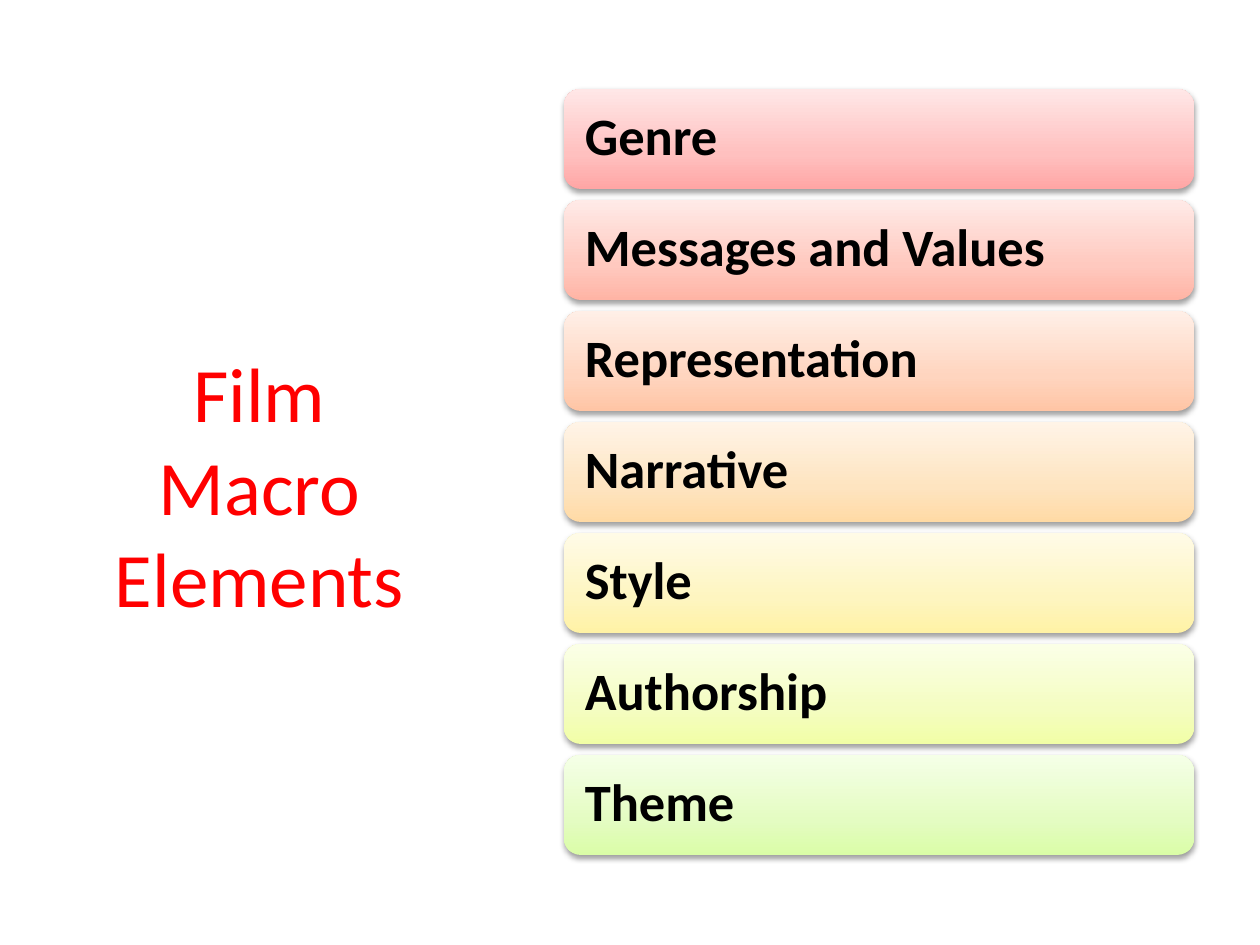
from lxml import etree
from pptx import Presentation
from pptx.dml.color import RGBColor
from pptx.enum.shapes import MSO_SHAPE
from pptx.enum.text import MSO_ANCHOR, PP_ALIGN
from pptx.util import Pt

ROUND = MSO_SHAPE.ROUNDED_RECTANGLE
MIDDLE = MSO_ANCHOR.MIDDLE
LEFT, CENTER = PP_ALIGN.LEFT, PP_ALIGN.CENTER
SCALE = 914400 / 126
NS = "http://schemas.openxmlformats.org/drawingml/2006/main"
STOPS = (0, 35, 100)
COLORS = {
    "title": "FF0000",
    "text": "000000",
    "shadow": "000000",
    "Genre": ("FFA6A5", "FFC0BF", "FFE7E7"),
    "Messages and Values": ("FFB4A5", "FFC9BF", "FFEAE7"),
    "Representation": ("FFC5A5", "FFD5BF", "FFEFE7"),
    "Narrative": ("FFDAA5", "FEE4C0", "FFF4E7"),
    "Style": ("FFF2A5", "FEF5C0", "FFFBE7"),
    "Authorship": ("F1FEA6", "F4FDC1", "FBFFE7"),
    "Theme": ("DAFDA7", "E4FCC2", "F5FFE7"),
}
BARS = ("Genre", "Messages and Values", "Representation", "Narrative",
        "Style", "Authorship", "Theme")


def px(*sizes):
    return [round(size * SCALE) for size in sizes]


class Deck:
    font = "Calibri"

    def __init__(self, width, height):
        self.show = Presentation()
        self.show.slide_width, self.show.slide_height = px(width, height)
        self.slide = self.show.slides.add_slide(self.show.slide_layouts[6])

    def label(self, shape, text, size, color, align, bold=False, space=1.0):
        frame = shape.text_frame
        frame.text = text
        frame.word_wrap = True
        frame.vertical_anchor = MIDDLE
        for para in frame.paragraphs:
            para.alignment = align
            para.line_spacing = space
            for run in para.runs:
                run.font.name = self.font
                run.font.size = Pt(size)
                run.font.bold = bold
                run.font.color.rgb = RGBColor.from_string(color)

    def title(self, text, *box):
        shape = self.slide.shapes.add_textbox(*px(*box))
        self.label(shape, text, 44, COLORS["title"], CENTER)

    def bar(self, text, *box):
        shape = self.slide.shapes.add_shape(ROUND, *px(*box))
        shape.line.fill.background()
        self.shade(shape, COLORS[text])
        frame = shape.text_frame
        frame.margin_left, frame.margin_right = px(16, 16)
        self.label(shape, text, 30, COLORS["text"], LEFT, True, 0.9)

    def shade(self, shape, hues):
        stops = "".join(
            f'<a:gs pos="{stop * 1000}"><a:srgbClr val="{hue}"/></a:gs>'
            for stop, hue in zip(STOPS, hues))
        fill = etree.fromstring(
            f'<a:gradFill xmlns:a="{NS}" rotWithShape="1"><a:gsLst>{stops}'
            '</a:gsLst><a:lin ang="16200000" scaled="0"/></a:gradFill>')
        glow = etree.fromstring(
            f'<a:effectLst xmlns:a="{NS}"><a:outerShdw blurRad="40000" '
            'dist="20000" dir="5400000" rotWithShape="0">'
            f'<a:srgbClr val="{COLORS["shadow"]}"><a:alpha val="38000"/>'
            '</a:srgbClr></a:outerShdw></a:effectLst>')
        props = shape.element.spPr
        props.find(f"{{{NS}}}prstGeom").addnext(fill)
        props.append(glow)


def main():
    deck = Deck(1260, 945)
    deck.title("Film\vMacro Elements", 87, 112, 345, 745)
    for row, name in enumerate(BARS):
        deck.bar(name, 564, 89 + row * 111, 630, 100)
    deck.show.save("out.pptx")


if __name__ == "__main__":
    main()
